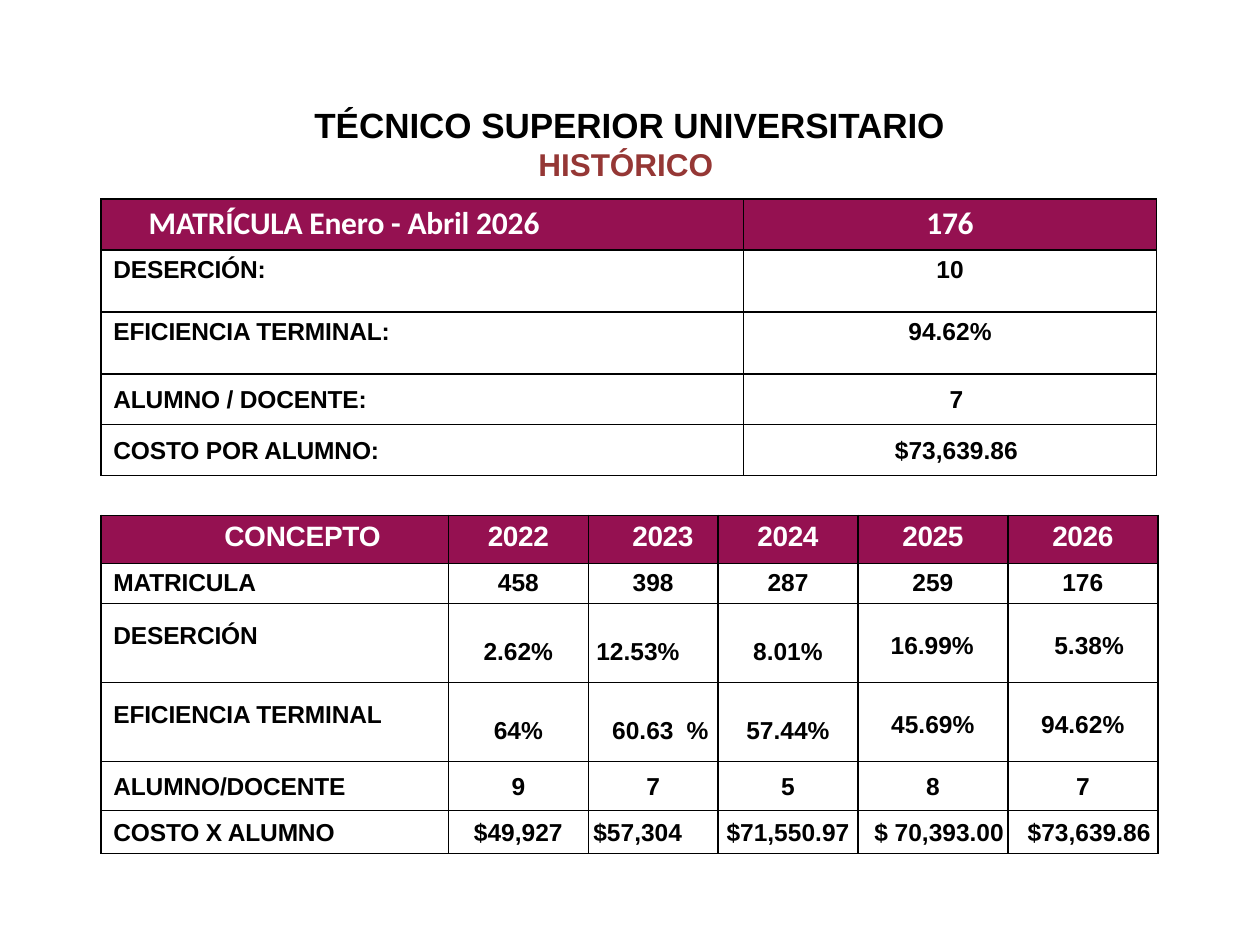
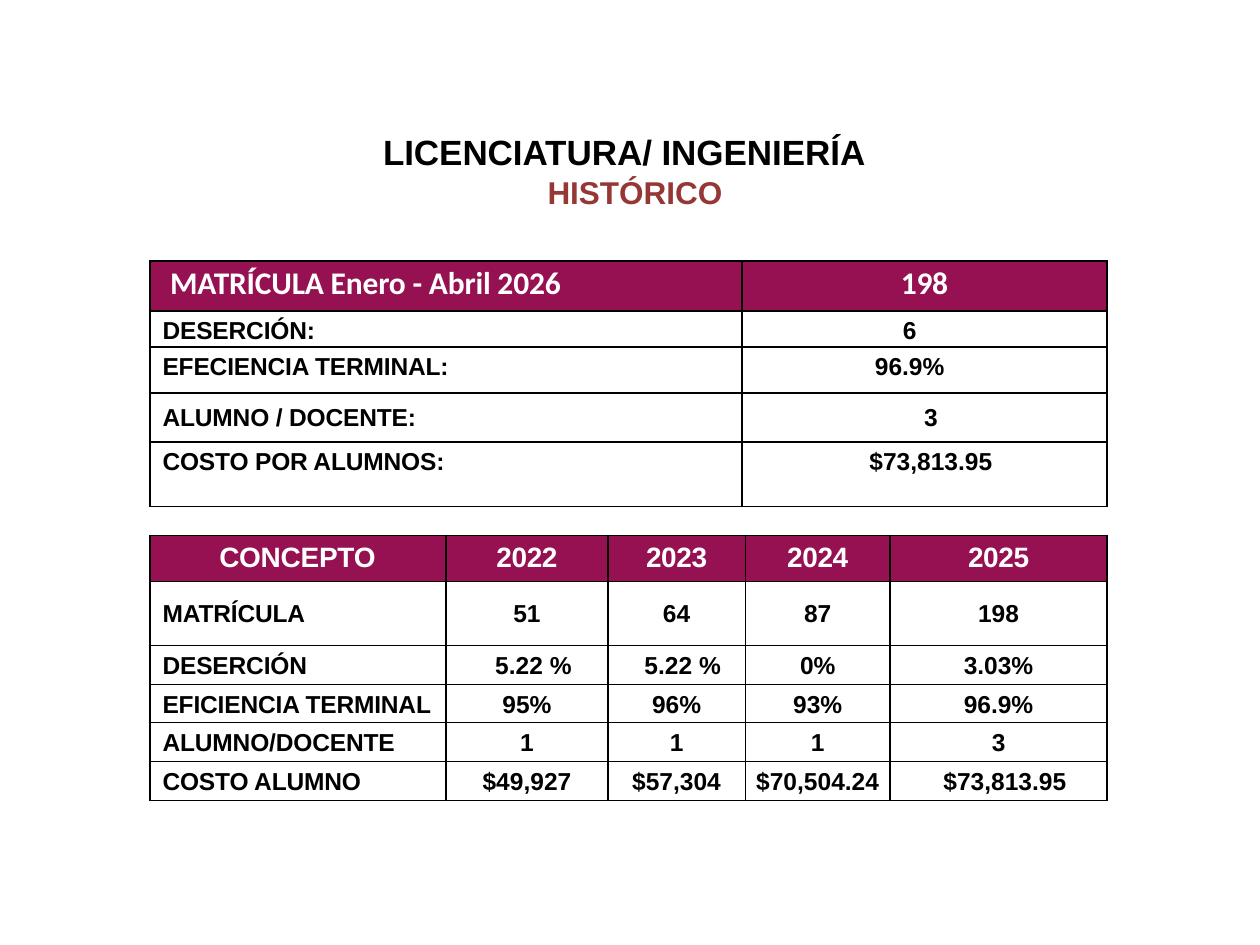
from lxml import etree
from pptx import Presentation
from pptx import util as u
from pptx.dml import color
from pptx.enum import text
from pptx.oxml import ns

Pt = u.Pt
ALIGN = {"left": text.PP_ALIGN.LEFT, "center": text.PP_ALIGN.CENTER,
         "right": text.PP_ALIGN.RIGHT}
COLORS = {"band": "951151", "on_band": "FFFFFF", "ink": "000000", "subtitle": "953735"}
BODY_FONT, BODY_SIZE = "Arial", 14
INDENT = 7.2
SHIFTED = {"left": INDENT}  # centred, nudged to the right

# Content. A row is (height, top inset, cells); a cell is text or (text, settings).
# Several runs in one cell are given as (text, spacing) pairs.
SLIDES = [
    {
        "title_box": (29.52, 58.8, 660.24, 46.8),
        "title": [("TÉCNICO SUPERIOR UNIVERSITARIO", {"spacing": 23.8}),
                  ("HISTÓRICO", {"spacing": 21.4, "right": 4})],
        "tables": [
            {
                "at": (57.6, 113.76), "columns": [367.2, 236.2], "header": ("Calibri", 18),
                "rows": [
                    (29.1, 2.9, [("MATRÍCULA Enero - Abril 2026", {"left": 27.4}), "176"]),
                    (35.4, 3.6, ["DESERCIÓN:", "10"]),
                    (35.4, 3.6, ["EFICIENCIA TERMINAL:", "94.62%"]),
                    (29.1, 7.2, ["ALUMNO / DOCENTE:", ("7", SHIFTED)]),
                    (29.1, 7.2, ["COSTO POR ALUMNO:", ("$73,639.86", SHIFTED)]),
                ],
            },
            {
                "at": (57.6, 294.48), "columns": [198.7, 79.9, 74.2, 79.9, 85.7, 85.7],
                "header": ("Arial", 16),
                "rows": [
                    (27.4, 3.6, [("CONCEPTO", {"left": 70.6}), "2022",
                                 ("2023", {"align": "left", "left": 25.2}),
                                 "2024", "2025", "2026"]),
                    (22.9, 3.6, ["MATRICULA", "458", "398", "287", "259", "176"]),
                    (45.2, 10.8, ["DESERCIÓN", ("2.62%", {"middle": True}),
                                  ("12.53%", {"middle": True, "align": "right", "right": 22}),
                                  ("8.01%", {"middle": True}),
                                  ("16.99%", {"middle": True, "top": 3.6,
                                              "align": "right", "right": 19.4}),
                                  ("5.38%", {"middle": True, "top": 3.6, "left": INDENT})]),
                    (45.2, 10.8, ["EFICIENCIA TERMINAL", ("64%", {"middle": True}),
                                  ([("60.63", 0), (" ", 3.5), ("%", -0.5)],
                                   {"middle": True, "align": "left", "left": 13.7}),
                                  ("57.44%", {"middle": True}),
                                  ("45.69%", {"middle": True, "top": 3.6}),
                                  ("94.62%", {"middle": True, "top": 3.6})]),
                    (28, 6.5, ["ALUMNO/DOCENTE", "9", "7", "5", "8", "7"]),
                    (24.6, 5, ["COSTO X ALUMNO", "$49,927",
                               ("$57,304", {"align": "right", "right": 20.6}), "$71,550.97",
                               ("$ 70,393.00", SHIFTED), ("$73,639.86", SHIFTED)]),
                ],
            },
        ],
    },
    {
        "title_box": (218.16, 74, 282.24, 46.8),
        "title": [("LICENCIATURA/ INGENIERÍA", {"align": "left", "left": 0.7}),
                  ("HISTÓRICO", {"left": INDENT})],
        "tables": [
            {
                "at": (85.68, 149.04), "columns": [338.4, 208.5], "header": ("Calibri", 18),
                "rows": [
                    (28.6, 2.2, [("MATRÍCULA Enero - Abril 2026", {"left": 11.5}), "198"]),
                    (20.6, 3.6, ["DESERCIÓN:", ("6", {"right": 17})]),
                    (26.3, 3.6, ["EFECIENCIA TERMINAL:", ("96.9%", {"right": 17})]),
                    (28, 6.5, ["ALUMNO / DOCENTE:", ("3", SHIFTED)]),
                    (37.1, 3.6, ["COSTO POR ALUMNOS:", ("$73,813.95", SHIFTED)]),
                ],
            },
            {
                "at": (85.68, 306), "columns": [169.2, 92.5, 78.5, 82.8, 123.9],
                "header": ("Arial", 16),
                "rows": [
                    (26.3, 3.6, [("CONCEPTO", {"left": 39.6}),
                                 "2022", "2023", "2024", "2025"]),
                    (36.6, 10.8, ["MATRÍCULA", "51", "64", "87", "198"]),
                    (22.3, 3.6, ["DESERCIÓN",
                                 ([("5.22 ", 0), ("%", -0.5)], {"align": "left", "left": 28.1}),
                                 ([("5.22 ", 0), ("%", -0.5)], {"align": "left", "left": 20.9}),
                                 "0%", "3.03%"]),
                    (21.7, 3.6, ["EFICIENCIA TERMINAL", "95%", "96%", "93%", "96.9%"]),
                    (22.3, 3.6, ["ALUMNO/DOCENTE", "1", "1", "1", "3"]),
                    (22.3, 3.6, ["COSTO ALUMNO", "$49,927", "$57,304", "$70,504.24",
                                 ("$73,813.95", SHIFTED)]),
                ],
            },
        ],
    },
]


def add_run(para, words, font, size, hue, spacing=0):
    span = para.add_run()
    span.text = words
    span.font.name, span.font.size, span.font.bold = font, Pt(size), True
    span.font.color.rgb = color.RGBColor.from_string(COLORS[hue])
    if spacing:
        span.font._element.set("spc", str(round(spacing * 100)))


def add_borders(cell):
    properties = cell._tc.get_or_add_tcPr()
    for position, side in enumerate(("lnL", "lnR", "lnT", "lnB")):
        line = etree.Element(ns.qn("a:" + side), w=str(Pt(1)))
        fill = etree.SubElement(line, ns.qn("a:solidFill"))
        etree.SubElement(fill, ns.qn("a:srgbClr"), val=COLORS["ink"])
        properties.insert(position, line)


def fill_cell(cell, content, top, is_header, is_label, header_font):
    words, settings = content if isinstance(content, tuple) else (content, {})
    cell.margin_left = Pt(settings.get("left", INDENT if is_label else 0))
    cell.margin_right = Pt(settings.get("right", 0))
    cell.margin_top, cell.margin_bottom = Pt(settings.get("top", top)), 0
    cell.vertical_anchor = (text.MSO_ANCHOR.MIDDLE if settings.get("middle")
                            else text.MSO_ANCHOR.TOP)
    if is_header:
        cell.fill.solid()
        cell.fill.fore_color.rgb = color.RGBColor.from_string(COLORS["band"])
    else:
        cell.fill.background()
    add_borders(cell)

    para = cell.text_frame.paragraphs[0]
    para.alignment = ALIGN[settings.get("align", "left" if is_label else "center")]
    font, size = header_font if is_header else (BODY_FONT, BODY_SIZE)
    spacing = -0.1 if is_label else -0.2 if is_header else 0
    runs = [(words, spacing)] if isinstance(words, str) else words
    for part, gap in runs:
        add_run(para, part, font, size, "on_band" if is_header else "ink", gap)


def add_grid(page, grid):
    rows, columns = grid["rows"], grid["columns"]
    left, top = grid["at"]
    height = sum(row[0] for row in rows)
    table = page.shapes.add_table(len(rows), len(columns), Pt(left), Pt(top),
                                  Pt(sum(columns)), Pt(height)).table
    table.horz_banding = table.first_row = False
    for column, width in zip(table.columns, columns):
        column.width = Pt(width)
    for r, (row_height, inset, cells) in enumerate(rows):
        table.rows[r].height = Pt(row_height)
        for c, content in enumerate(cells):
            fill_cell(table.cell(r, c), content, inset, r == 0, c == 0, grid["header"])


def add_title(page, bounds, lines):
    box = page.shapes.title
    box.left, box.top, box.width, box.height = map(Pt, bounds)
    frame = box.text_frame
    frame.word_wrap, frame.auto_size = True, text.MSO_AUTO_SIZE.NONE
    frame.vertical_anchor = text.MSO_ANCHOR.TOP
    frame.margin_left = frame.margin_right = frame.margin_bottom = 0
    frame.margin_top = Pt(0.7)
    styles = [(20, "ink", -0.05), (18, "subtitle", 0)]
    for i, ((words, settings), (size, hue, gap)) in enumerate(zip(lines, styles)):
        para = frame.add_paragraph() if i else frame.paragraphs[0]
        para.alignment = ALIGN[settings.get("align", "center")]
        para.line_spacing = Pt(settings["spacing"]) if "spacing" in settings else 1.0
        properties = para._p.get_or_add_pPr()
        properties.set("marL", str(Pt(settings.get("left", 0))))
        properties.set("marR", str(Pt(settings.get("right", 0))))
        add_run(para, words, BODY_FONT, size, hue, gap)


def main():
    deck = Presentation()
    deck.slide_width, deck.slide_height = Pt(720), Pt(540)
    title_only = deck.slide_layouts[5]
    for content in SLIDES:
        page = deck.slides.add_slide(title_only)
        add_title(page, content["title_box"], content["title"])
        for grid in content["tables"]:
            add_grid(page, grid)
    deck.save("out.pptx")


if __name__ == "__main__":
    main()
